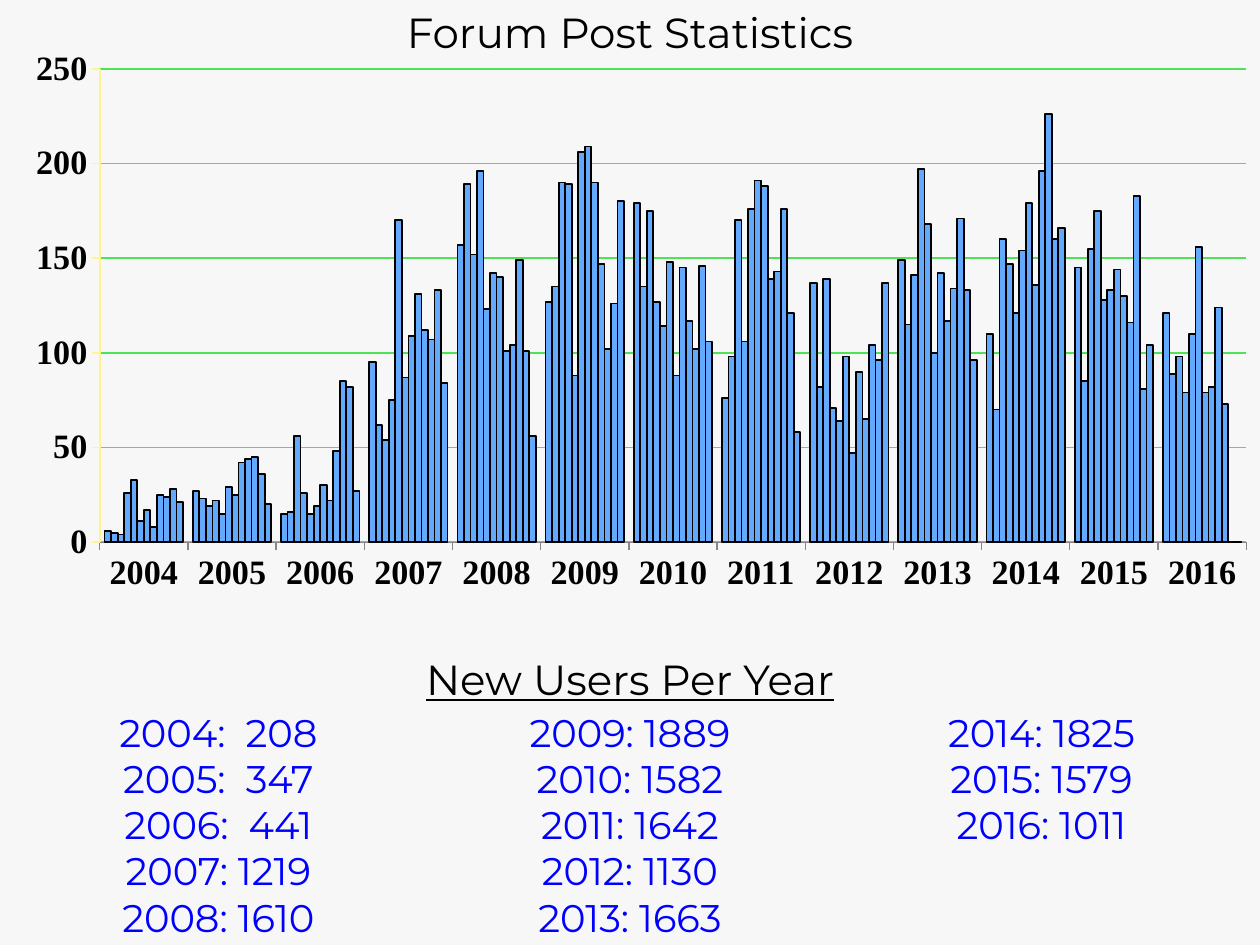
from dataclasses import dataclass

from lxml import etree
from pptx import Presentation
from pptx.chart.data import CategoryChartData
from pptx.dml.color import RGBColor
from pptx.enum.chart import XL_CHART_TYPE, XL_TICK_LABEL_POSITION, XL_TICK_MARK
from pptx.enum.text import MSO_ANCHOR, MSO_AUTO_SIZE, PP_ALIGN
from pptx.oxml.ns import qn
from pptx.util import Pt

COLUMNS = XL_CHART_TYPE.COLUMN_CLUSTERED
LABELS_LOW = XL_TICK_LABEL_POSITION.LOW
TICK_OUT = XL_TICK_MARK.OUTSIDE
TICK_NONE = XL_TICK_MARK.NONE
TOP = MSO_ANCHOR.TOP
NO_FIT = MSO_AUTO_SIZE.NONE
CENTER = PP_ALIGN.CENTER

BACKGROUND = RGBColor(0xF7, 0xF7, 0xF7)
BLACK = RGBColor(0, 0, 0)
BLUE = RGBColor(0, 0, 0xFF)
BAR = RGBColor(0x63, 0xAA, 0xFE)
GRID = RGBColor(0x4E, 0xE2, 0x57)
AXIS = RGBColor(0xFF, 0xF5, 0x8C)

TEXT_FONT = "Montserrat"
CHART_FONT = "Times New Roman"
WIDTH, HEIGHT = 720, 540
PLOT = {"x": 0.068, "y": 0.06, "w": 0.921, "h": 0.759}


@dataclass
class Year:
    year: int
    new_users: int
    posts: list[int]


@dataclass
class TextStyle:
    size: float
    color: RGBColor
    underline: bool = False


HEADING = TextStyle(24, BLACK)
SUBHEADING = TextStyle(24, BLACK, True)
LIST = TextStyle(22, BLUE)

YEARS = [
    Year(2004, 208, [6, 5, 4, 26, 33, 11, 17, 8, 25, 24, 28, 21]),
    Year(2005, 347, [27, 23, 19, 22, 15, 29, 25, 42, 44, 45, 36, 20]),
    Year(2006, 441, [15, 16, 56, 26, 15, 19, 30, 22, 48, 85, 82, 27]),
    Year(2007, 1219, [95, 62, 54, 75, 170, 87, 109, 131, 112, 107, 133, 84]),
    Year(2008, 1610, [157, 189, 152, 196, 123, 142, 140, 101, 104, 149, 101, 56]),
    Year(2009, 1889, [127, 135, 190, 189, 88, 206, 209, 190, 147, 102, 126, 180]),
    Year(2010, 1582, [179, 135, 175, 127, 114, 148, 88, 145, 117, 102, 146, 106]),
    Year(2011, 1642, [76, 98, 170, 106, 176, 191, 188, 139, 143, 176, 121, 58]),
    Year(2012, 1130, [137, 82, 139, 71, 64, 98, 47, 90, 65, 104, 96, 137]),
    Year(2013, 1663, [149, 115, 141, 197, 168, 100, 142, 117, 134, 171, 133, 96]),
    Year(2014, 1825, [110, 70, 160, 147, 121, 154, 179, 136, 196, 226, 160, 166]),
    Year(2015, 1579, [145, 85, 155, 175, 128, 133, 144, 130, 116, 183, 81, 104]),
    Year(2016, 1011, [121, 89, 98, 79, 110, 156, 79, 82, 124, 73, 0, 0]),
]


def place(sp, left: float, top: float, width: float, height: float) -> None:
    sp.left, sp.top, sp.width, sp.height = Pt(left), Pt(top), Pt(width), Pt(height)


def write_lines(tf, lines: list[str], style: TextStyle) -> None:
    tf.word_wrap = True
    tf.auto_size = NO_FIT
    tf.vertical_anchor = TOP
    for i, line in enumerate(lines):
        p = tf.paragraphs[0] if i == 0 else tf.add_paragraph()
        pPr = p._p.get_or_add_pPr()
        pPr.set("marL", "0")
        pPr.set("indent", "0")
        etree.SubElement(pPr, qn("a:buNone"))
        p.alignment = CENTER
        p.space_before = Pt(0)
        r = p.add_run()
        r.text = line
        r.font.name = TEXT_FONT
        r.font.size = Pt(style.size)
        r.font.color.rgb = style.color
        if style.underline:
            r.font.underline = True


def set_plot_area(chart) -> None:
    area = chart._chartSpace.chart.plotArea
    for old in area.findall(qn("c:layout")):
        area.remove(old)
    layout = etree.Element(qn("c:layout"))
    area.insert(0, layout)
    manual = etree.SubElement(layout, qn("c:manualLayout"))
    settings = {"layoutTarget": "inner", "xMode": "edge", "yMode": "edge", **PLOT}
    for name, value in settings.items():
        etree.SubElement(manual, qn(f"c:{name}")).set("val", str(value))


def add_post_chart(slide) -> None:
    data = CategoryChartData()
    data.categories = [str(y.year) for y in YEARS]
    for i, values in enumerate(zip(*(y.posts for y in YEARS)), 1):
        data.add_series(f"Series {i}", values)
    frame = slide.shapes.add_chart(COLUMNS, Pt(8.64), Pt(18), Pt(711.36), Pt(356.4), data)
    chart = frame.chart
    chart.has_legend = False
    chart.has_title = False
    chart.font.name = CHART_FONT
    chart.font.size = Pt(19.5)
    chart.font.bold = True
    chart.font.color.rgb = BLACK
    set_plot_area(chart)

    plot = chart.plots[0]
    plot.gap_width = 150
    plot.overlap = 0
    plot.vary_by_categories = False
    for series in plot.series:
        series.invert_if_negative = False
        series.format.fill.solid()
        series.format.fill.fore_color.rgb = BAR
        series.format.line.color.rgb = BLACK
        series.format.line.width = Pt(1)

    years = chart.category_axis
    years.tick_label_position = LABELS_LOW
    posts = chart.value_axis
    posts.minimum_scale, posts.maximum_scale, posts.major_unit = 0, 250, 50
    for axis in (years, posts):
        axis.major_tick_mark = TICK_OUT
        axis.minor_tick_mark = TICK_NONE
    posts.has_major_gridlines = True
    for line, color in ((posts.format.line, AXIS), (posts.major_gridlines.format.line, GRID)):
        line.color.rgb = color
        line.width = Pt(1)


def main() -> None:
    prs = Presentation()
    prs.slide_width, prs.slide_height = Pt(WIDTH), Pt(HEIGHT)
    slide = prs.slides.add_slide(prs.slide_layouts[1])
    slide.background.fill.solid()
    slide.background.fill.fore_color.rgb = BACKGROUND

    title, body = slide.placeholders
    place(title, 0, 0, WIDTH, 36)
    write_lines(title.text_frame, ["Forum Post Statistics"], HEADING)

    add_post_chart(slide)

    place(body, 0, 405, WIDTH, 135)
    tf = body.text_frame
    tf.margin_top = tf.margin_bottom = 0
    write_lines(tf, [f"{y.year}: {y.new_users:>4}" for y in YEARS], LIST)
    tf._txBody.bodyPr.set("numCol", "3")

    sp = slide.shapes.add_textbox(0, Pt(370), Pt(WIDTH), Pt(36))
    write_lines(sp.text_frame, ["New Users Per Year"], SUBHEADING)

    prs.save("out.pptx")


if __name__ == "__main__":
    main()
